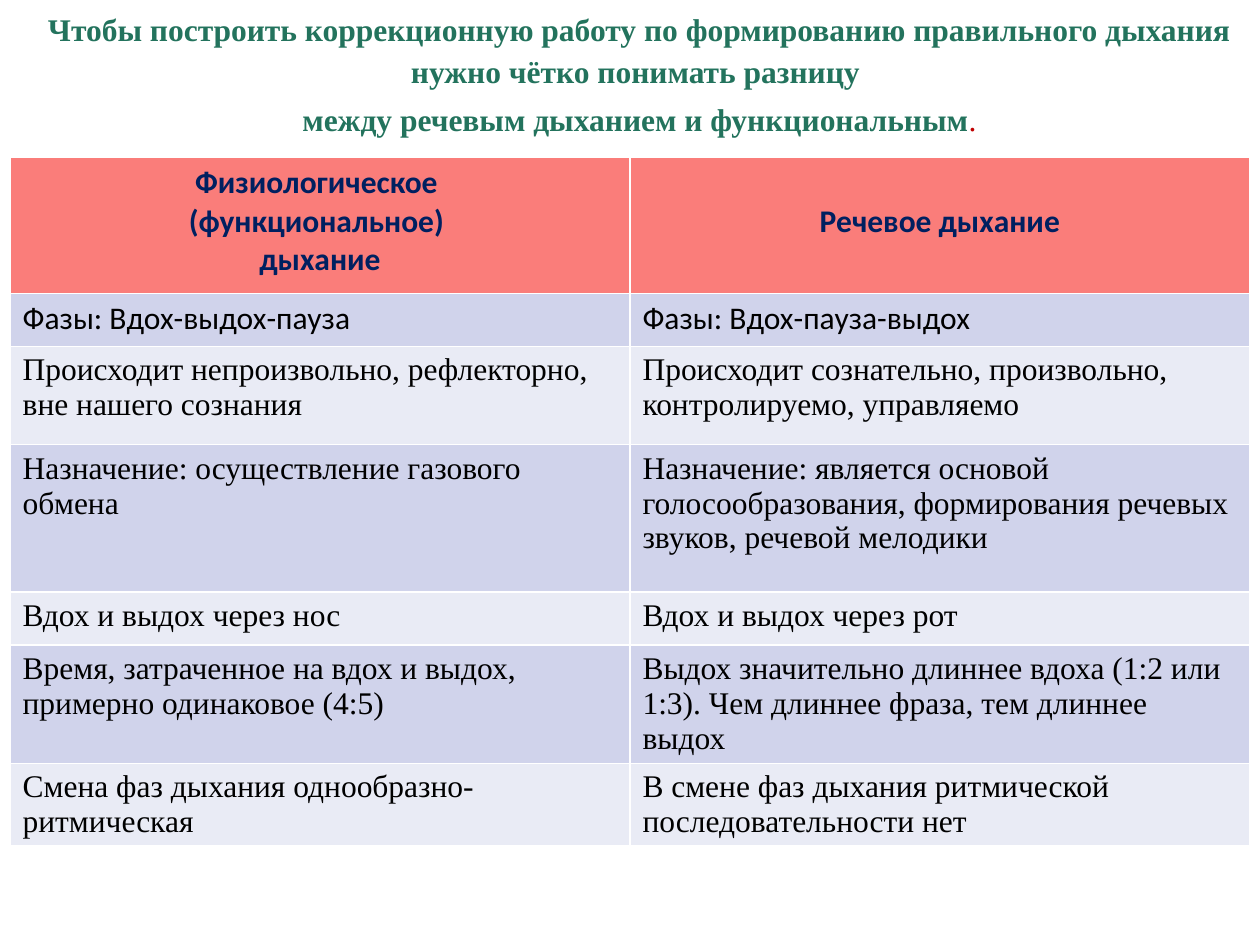
from typing import NamedTuple

from lxml.etree import SubElement
from pptx import Presentation
from pptx.dml.color import RGBColor
from pptx.enum.text import MSO_AUTO_SIZE, PP_ALIGN
from pptx.oxml.ns import qn
from pptx.util import Inches, Pt

SLIDE_WIDTH, SLIDE_HEIGHT = Inches(10), Inches(7.5)
LEFT = 0.008 * SLIDE_WIDTH
COLUMN_WIDTH = 0.492 * SLIDE_WIDTH
SERIF, SANS = "Times New Roman", "Calibri"
GREEN, RED, NAVY, BLACK = "23735D", "C00000", "002060", "000000"
HEADER_FILL, BANDS = "FA7D7A", ("D0D3EB", "E9EBF5")
HEADER_HEIGHT = 1.08
HEADER_LINE = 0.305


class Comparison(NamedTuple):
    physiological: str
    speech: str
    height: float
    font: str = SERIF


HEADERS = (
    ("Физиологическое ", "(функциональное) ", "дыхание"),
    ("Речевое дыхание",),
)
COMPARISONS = (
    Comparison("Фазы: Вдох-выдох-пауза", "Фазы: Вдох-пауза-выдох", 0.42, SANS),
    Comparison("Происходит непроизвольно, рефлекторно, вне нашего сознания",
               "Происходит сознательно, произвольно, контролируемо, управляемо", 0.78),
    Comparison("Назначение: осуществление газового обмена",
               "Назначение: является основой голосообразования, формирования "
               "речевых звуков, речевой мелодики", 1.17),
    Comparison("Вдох и выдох через нос", "Вдох и выдох через рот", 0.42),
    Comparison("Время, затраченное на вдох и выдох, примерно одинаковое (4:5)",
               "Выдох значительно длиннее вдоха (1:2 или 1:3). "
               "Чем длиннее фраза, тем длиннее выдох", 0.94),
    Comparison("Смена фаз дыхания однообразно-ритмическая",
               "В смене фаз дыхания ритмической последовательности нет", 0.65),
)


def rgb(color: str) -> RGBColor:
    return RGBColor.from_string(color)


def write(paragraph, text: str, *, font: str = SERIF, color: str = BLACK,
          bold: bool = False, align=PP_ALIGN.LEFT) -> None:
    paragraph.alignment = align
    run = paragraph.add_run()
    run.text = text
    run.font.name = font
    run.font.size = Pt(18)
    run.font.bold = bold
    run.font.color.rgb = rgb(color)


def next_paragraph(frame, index: int):
    return frame.add_paragraph() if index else frame.paragraphs[0]


def draw_introduction(body) -> None:
    body.left, body.top = int(LEFT), 0
    body.width, body.height = int(SLIDE_WIDTH - LEFT), int(0.3 * SLIDE_HEIGHT)
    frame = body.text_frame
    frame.auto_size = MSO_AUTO_SIZE.NONE
    sentences = (
        "Чтобы построить коррекционную работу по формированию правильного "
        "дыхания нужно чётко понимать разницу ",
        "между речевым дыханием и функциональным",
    )
    for index, sentence in enumerate(sentences):
        paragraph = next_paragraph(frame, index)
        paragraph.line_spacing = 1.1
        paragraph.space_before = Pt(3.6 * index)
        properties = paragraph._p.get_or_add_pPr()
        properties.set("marL", str(Inches(0.07)))
        properties.set("indent", "0")
        SubElement(properties, qn("a:buNone"))
        write(paragraph, sentence, color=GREEN, bold=True, align=PP_ALIGN.CENTER)
    write(paragraph, ".", color=RED, align=PP_ALIGN.CENTER)


def fill_cell(cell, color: str) -> None:
    cell.fill.solid()
    cell.fill.fore_color.rgb = rgb(color)


def draw_comparison(slide) -> None:
    heights = [HEADER_HEIGHT] + [row.height for row in COMPARISONS]
    table = slide.shapes.add_table(
        len(heights), len(HEADERS), int(LEFT), int(SLIDE_HEIGHT / 6),
        int(COLUMN_WIDTH * len(HEADERS)), Inches(sum(heights))).table
    for column in table.columns:
        column.width = int(COLUMN_WIDTH)
    for row, height in zip(table.rows, heights):
        row.height = Inches(height)

    for column, lines in enumerate(HEADERS):
        cell = table.cell(0, column)
        fill_cell(cell, HEADER_FILL)
        lines_above = (len(HEADERS[0]) - len(lines)) / 2
        cell.margin_top = Inches(0.05 + lines_above * HEADER_LINE)
        for index, line in enumerate(lines):
            write(next_paragraph(cell.text_frame, index), line, font=SANS,
                  color=NAVY, bold=True, align=PP_ALIGN.CENTER)

    for index, row in enumerate(COMPARISONS):
        for column, text in enumerate((row.physiological, row.speech)):
            cell = table.cell(index + 1, column)
            fill_cell(cell, BANDS[index % 2])
            write(cell.text_frame.paragraphs[0], text, font=row.font)


def main() -> None:
    presentation = Presentation()
    presentation.slide_width, presentation.slide_height = SLIDE_WIDTH, SLIDE_HEIGHT
    slide = presentation.slides.add_slide(presentation.slide_layouts[1])
    unused_title = slide.shapes.title.element
    unused_title.getparent().remove(unused_title)
    draw_introduction(slide.placeholders[1])
    draw_comparison(slide)
    presentation.save("out.pptx")


if __name__ == "__main__":
    main()
